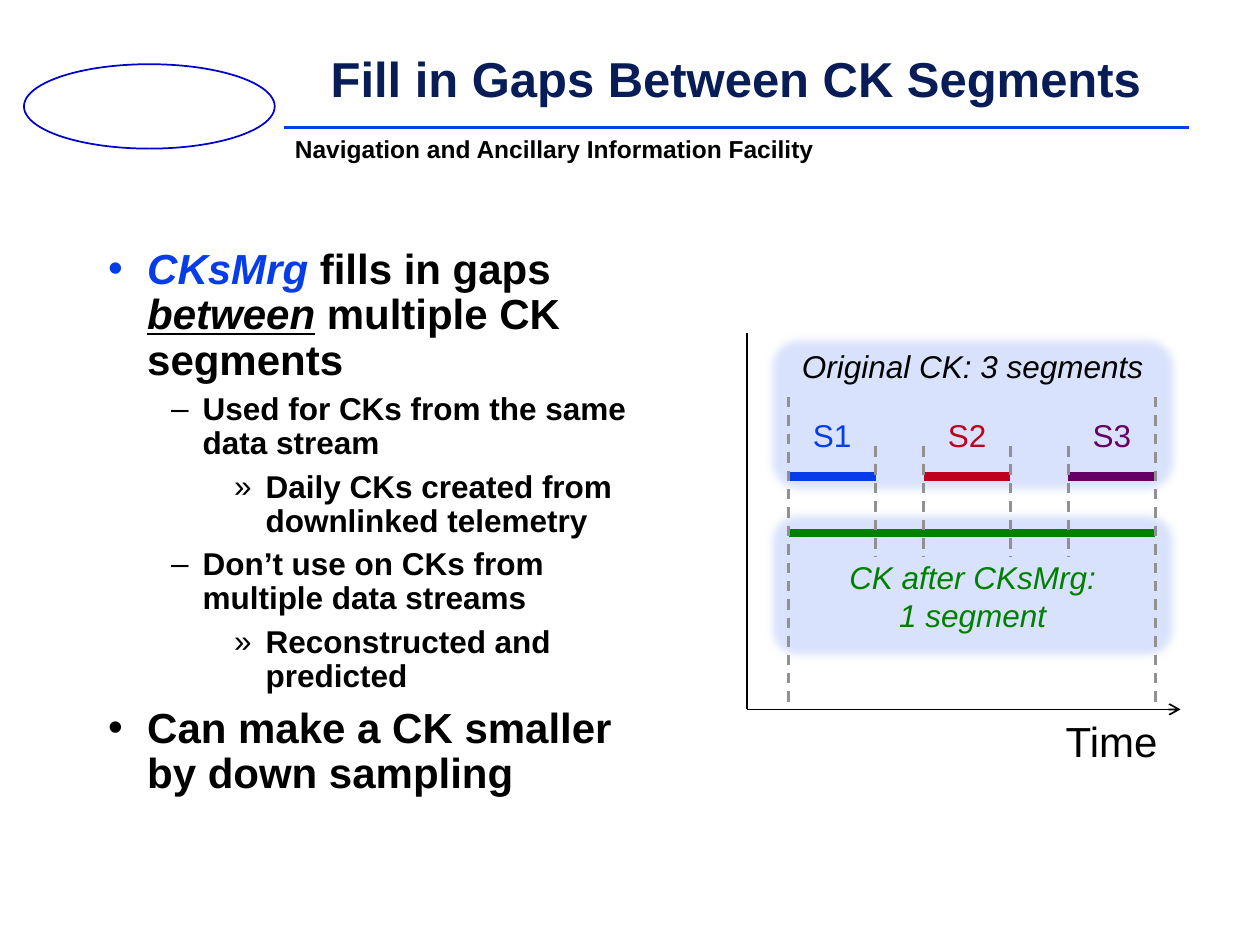
from lxml.etree import SubElement
from pptx import Presentation
from pptx.dml.color import RGBColor
from pptx.enum.dml import MSO_LINE
from pptx.enum.shapes import MSO_CONNECTOR, MSO_SHAPE
from pptx.enum.text import MSO_ANCHOR, MSO_AUTO_SIZE, PP_ALIGN
from pptx.oxml.ns import qn
from pptx.util import Inches, Pt

COLORS = {
    "black": "000000", "navy": "081D58", "blue": "063DE8", "emblem": "0000CC",
    "red": "BD011E", "purple": "660066", "green": "008000",
    "gray": "919191", "panel": "D9E2FC",
}
# Left indent, hanging indent, bullet and text size of each outline level
LEVELS = [(0.31, 0.31, "•", 24), (0.75, 0.25, "–", 18), (1.25, 0.25, "»", 18)]


def color(name):
    return RGBColor.from_string(COLORS[name])


class SlideBuilder:
    """Holds the font and the current slide, and adds styled elements to it."""

    font = "Arial"

    def __init__(self, slide):
        self.slide = slide

    def style(self, run, size, ink="black", bold=False, italic=False, underline=False):
        run.font.name = self.font
        run.font.size = Pt(size)
        run.font.color.rgb = color(ink)
        run.font.bold = bold
        run.font.italic = italic
        run.font.underline = underline

    def fill_text(self, frame, text, size, align=PP_ALIGN.LEFT, spacing=1.0, **look):
        frame.text = text
        for paragraph in frame.paragraphs:
            paragraph.alignment = align
            paragraph.line_spacing = spacing
            for run in paragraph.runs:
                self.style(run, size, **look)

    def set_insets(self, frame, side, top):
        frame.margin_left = frame.margin_right = Inches(side)
        frame.margin_top = frame.margin_bottom = Inches(top)

    def title(self, text, left, top, width, height):
        title = self.slide.shapes.title
        title.left, title.top = Inches(left), Inches(top)
        title.width, title.height = Inches(width), Inches(height)
        frame = title.text_frame
        frame.auto_size = MSO_AUTO_SIZE.NONE
        frame.word_wrap = False
        frame.vertical_anchor = MSO_ANCHOR.TOP
        self.set_insets(frame, 0.07, 0.03)
        self.fill_text(frame, text, 28, PP_ALIGN.CENTER, 0.87, ink="navy", bold=True)

    def text_box(self, left, top, width, height, wrap=True):
        box = self.slide.shapes.add_textbox(
            Inches(left), Inches(top), Inches(width), Inches(height))
        box.text_frame.word_wrap = wrap
        return box.text_frame

    def label(self, text, left, top, width, height, size, wrap=True, insets=(0.1, 0.05), **look):
        frame = self.text_box(left, top, width, height, wrap)
        self.set_insets(frame, *insets)
        self.fill_text(frame, text, size, **look)

    def outline(self, items, left, top, width, height):
        """Add a bulleted outline of (level, [(text, look), ...]) items."""
        frame = self.text_box(left, top, width, height)
        for index, (level, pieces) in enumerate(items):
            indent, hanging, bullet, size = LEVELS[level]
            paragraph = frame.paragraphs[0] if index == 0 else frame.add_paragraph()
            paragraph.level = level
            properties = paragraph._p.get_or_add_pPr()
            properties.set("marL", str(Inches(indent)))
            properties.set("indent", str(-Inches(hanging)))
            SubElement(properties, qn("a:buFont"), typeface=self.font)
            SubElement(properties, qn("a:buChar"), char=bullet)
            paragraph.line_spacing = 0.9
            if index:
                paragraph.space_before = Pt(0.3 * size)
            for text, look in pieces:
                run = paragraph.add_run()
                run.text = text
                self.style(run, size, bold=True, **look)

    def line(self, x1, y1, x2, y2, ink, width, dashed=False, arrow=False):
        connector = self.slide.shapes.add_connector(
            MSO_CONNECTOR.STRAIGHT, Inches(x1), Inches(y1), Inches(x2), Inches(y2))
        connector.line.color.rgb = color(ink)
        connector.line.width = Pt(width)
        if dashed:
            connector.line.dash_style = MSO_LINE.DASH
        if arrow:
            SubElement(connector.line._get_or_add_ln(), qn("a:tailEnd"), type="arrow")
        SubElement(connector._element.spPr, qn("a:effectLst"))

    def ring(self, left, top, width, height, ink):
        ring = self.slide.shapes.add_shape(
            MSO_SHAPE.OVAL, Inches(left), Inches(top), Inches(width), Inches(height))
        ring.shadow.inherit = False
        ring.fill.background()
        ring.line.color.rgb = color(ink)
        ring.line.width = Pt(1)

    def soft_panel(self, text, top, height, ink, top_inset=0.05):
        """Add a rounded panel with blurred edges and a caption."""
        panel = self.slide.shapes.add_shape(
            MSO_SHAPE.ROUNDED_RECTANGLE,
            Inches(6.07), Inches(top), Inches(3.3), Inches(height))
        panel.shadow.inherit = False
        panel.fill.solid()
        panel.fill.fore_color.rgb = color("panel")
        panel.line.fill.background()
        effects = panel._element.spPr.find(qn("a:effectLst"))
        SubElement(effects, qn("a:softEdge"), rad=str(Pt(5)))
        frame = panel.text_frame
        frame.vertical_anchor = MSO_ANCHOR.TOP
        frame.margin_top = Inches(top_inset)
        self.fill_text(frame, text, 18, PP_ALIGN.CENTER, ink=ink, italic=True)


def add_header(builder):
    builder.line(2.25, 1.01, 9.44, 1.01, "blue", 1.5)
    builder.label("Navigation and Ancillary Information Facility", 2.27, 1.06, 4.29, 0.27,
                  14, wrap=False, insets=(0.07, 0.03), spacing=0.9, bold=True)
    builder.ring(0.19, 0.51, 1.99, 0.67, "emblem")
    builder.title("Fill in Gaps Between CK Segments", 2.52, 0.42, 6.64, 0.48)


def add_outline(builder):
    builder.outline([
        (0, [("CKsMrg ", {"ink": "blue", "italic": True}),
             ("fills in gaps ", {}),
             ("between", {"italic": True, "underline": True}),
             (" multiple CK segments", {})]),
        (1, [("Used for CKs from the same data stream", {})]),
        (2, [("Daily CKs created from downlinked telemetry", {})]),
        (1, [("Don’t use on CKs from multiple data streams", {})]),
        (2, [("Reconstructed and predicted", {})]),
        (0, [("Can make a CK smaller by down sampling", {})]),
    ], 0.76, 1.92, 4.61, 4.74)


def add_timeline(builder):
    origin_x, axis_y = 5.93, 5.63
    start, end, segment_width = 6.26, 9.17, 0.69
    segments = [("S1", start, "blue"), ("S2", 7.33, "red"),
                ("S3", end - segment_width, "purple")]

    builder.soft_panel("Original CK: 3 segments", 2.64, 1.3, "black")
    builder.soft_panel("CK after CKsMrg:\n1 segment", 4.03, 1.23, "green", top_inset=0.34)
    builder.line(origin_x, axis_y, 9.37, axis_y, "black", 1, arrow=True)
    builder.label("Time", 8.36, axis_y, 0.94, 0.5, 24, wrap=False)
    builder.line(origin_x, axis_y, origin_x, 2.64, "black", 1)

    for name, left, ink in segments:
        builder.line(left, 3.78, left + segment_width, 3.78, ink, 5)
        builder.label(name, left, 3.25, segment_width, 0.4, 18,
                      align=PP_ALIGN.CENTER, ink=ink)
    builder.line(start, 4.23, end, 4.23, "green", 5)

    for x in (start, end):
        builder.line(x, 3.15, x, axis_y, "gray", 1.5, dashed=True)
    edges = [x for _, left, _ in segments for x in (left, left + segment_width)]
    for x in edges[1:-1]:
        builder.line(x, 3.54, x, 4.42, "gray", 1.5, dashed=True)


def main():
    presentation = Presentation()
    presentation.slide_width, presentation.slide_height = Inches(10), Inches(7.5)
    title_only = presentation.slide_layouts[5]
    builder = SlideBuilder(presentation.slides.add_slide(title_only))
    add_header(builder)
    add_outline(builder)
    add_timeline(builder)
    presentation.save("out.pptx")


if __name__ == "__main__":
    main()
